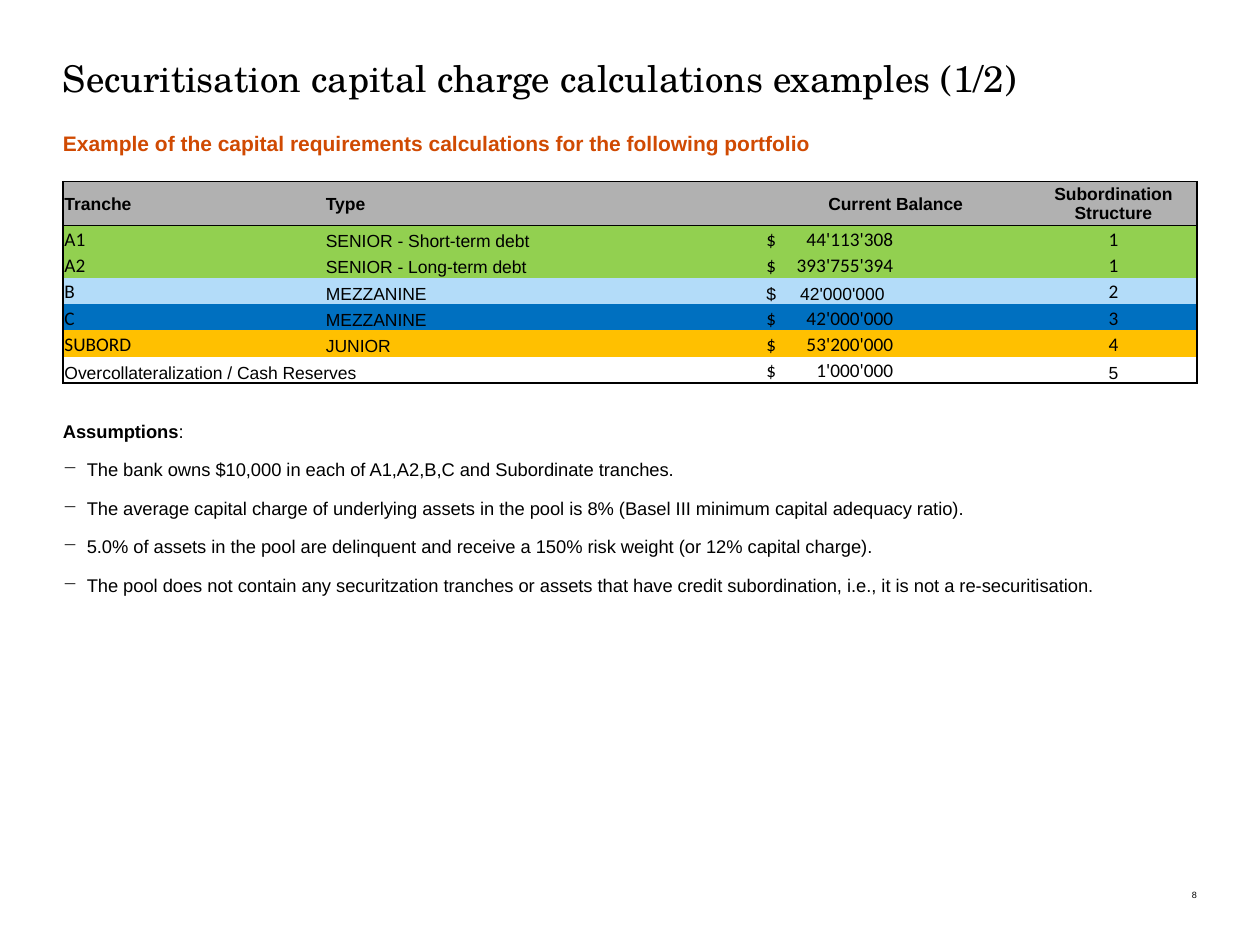
import dataclasses
from typing import Optional

import lxml.etree
import pptx
import pptx.dml.color
import pptx.enum.text
import pptx.oxml.ns
import pptx.util

Cm, Pt = pptx.util.Cm, pptx.util.Pt
ALIGN, ANCHOR = pptx.enum.text.PP_ALIGN, pptx.enum.text.MSO_ANCHOR


@dataclasses.dataclass(frozen=True)
class TextStyle:
    font: str
    size: float
    color: str = "000000"
    bold: bool = False


@dataclasses.dataclass(frozen=True)
class Theme:
    title: TextStyle = TextStyle("TeX Gyre Schola", 21)
    subtitle: TextStyle = TextStyle("Arial", 12, "D04A02", True)
    body: TextStyle = TextStyle("Arial", 10.5)
    body_bold: TextStyle = TextStyle("Arial", 10.5, bold=True)
    header: TextStyle = TextStyle("Arial", 10, bold=True)
    label: TextStyle = TextStyle("Arial", 10)
    figure: TextStyle = TextStyle("Calibri", 11)
    page_number: TextStyle = TextStyle("Arial", 5.2)
    border: str = "000000"
    header_fill: str = "B1B1B1"
    senior: str = "92D050"
    mezzanine_light: str = "B3DCF9"
    mezzanine_dark: str = "0070C0"
    junior: str = "FFC000"


THEME = Theme()


@dataclasses.dataclass(frozen=True)
class Tranche:
    name: str
    kind: str
    balance: str
    rank: str
    fill: Optional[str] = None
    name_style: TextStyle = THEME.figure
    balance_style: TextStyle = THEME.figure
    rank_style: TextStyle = THEME.figure


HEADINGS = ("Tranche", "Type", "Current Balance", "Subordination Structure")
TRANCHES = (
    Tranche("A1", "SENIOR - Short-term debt", "44'113'308", "1", THEME.senior),
    Tranche("A2", "SENIOR - Long-term debt", "393'755'394", "1", THEME.senior),
    Tranche("B", "MEZZANINE", "42'000'000", "2", THEME.mezzanine_light,
            balance_style=THEME.label),
    Tranche("C", "MEZZANINE", "42'000'000", "3", THEME.mezzanine_dark),
    Tranche("SUBORD", "JUNIOR", "53'200'000", "4", THEME.junior),
    Tranche("Overcollateralization / Cash Reserves", "", "1'000'000", "5",
            name_style=THEME.label, rank_style=THEME.label),
)
ASSUMPTIONS = (
    "The bank owns $10,000 in each of A1,A2,B,C and Subordinate tranches.",
    "The average capital charge of underlying assets in the pool is 8% "
    "(Basel III minimum capital adequacy ratio).",
    "5.0% of assets in the pool are delinquent and receive a 150% risk weight "
    "(or 12% capital charge).",
    "The pool does not contain any securitzation tranches or assets that have "
    "credit subordination, i.e., it is not a re-securitisation.",
)
COLUMN_WIDTHS = (5.27, 8.81, 5.41, 3.37)
HEADER_HEIGHT, ROW_HEIGHT = 0.82, 0.53
LEFT, WIDTH = 1.27, 22.86


def add_element(parent, tag: str, **attributes: str):
    return lxml.etree.SubElement(parent, pptx.oxml.ns.qn(tag), attributes)


def style_run(run, style: TextStyle) -> None:
    run.font.name = style.font
    run.font.size = Pt(style.size)
    run.font.bold = style.bold
    run.font.color.rgb = pptx.dml.color.RGBColor.from_string(style.color)


def write(paragraph, text: str, style: TextStyle) -> None:
    paragraph.text = text
    for run in paragraph.runs:
        style_run(run, style)


def add_text_frame(slide, left: float, top: float, width: float, height: float):
    frame = slide.shapes.add_textbox(Cm(left), Cm(top), Cm(width), Cm(height)).text_frame
    frame.word_wrap = True
    frame.margin_left = frame.margin_right = frame.margin_top = frame.margin_bottom = 0
    return frame


def add_bullet(paragraph) -> None:
    """Hang the paragraph behind a minus sign."""
    properties = paragraph._p.get_or_add_pPr()
    properties.set("marL", str(Cm(0.48)))
    properties.set("indent", str(-Cm(0.48)))
    add_element(properties, "a:buChar", char="−")


def add_right_tab(paragraph, position: float) -> None:
    tabs = add_element(paragraph._p.get_or_add_pPr(), "a:tabLst")
    add_element(tabs, "a:tab", pos=str(Cm(position)), algn="r")


def set_borders(cell, widths: dict[str, float]) -> None:
    """Draw the sides named L, R, T, B at their point widths and clear the others."""
    properties = cell._tc.get_or_add_tcPr()
    for side in "LRTB":
        width = widths.get(side, 0)
        line = add_element(properties, f"a:ln{side}", w=str(Pt(width)))
        if width:
            fill = add_element(line, "a:solidFill")
            add_element(fill, "a:srgbClr", val=THEME.border)
        else:
            add_element(line, "a:noFill")


def fill_cell(cell, text: str, style: TextStyle, fill: Optional[str],
              borders: dict[str, float], centred: bool, anchor) -> None:
    set_borders(cell, borders)
    if fill:
        cell.fill.solid()
        cell.fill.fore_color.rgb = pptx.dml.color.RGBColor.from_string(fill)
    else:
        cell.fill.background()
    cell.margin_left = cell.margin_right = cell.margin_top = Cm(0.03)
    cell.margin_bottom = 0
    cell.vertical_anchor = anchor
    paragraph = cell.text_frame.paragraphs[0]
    write(paragraph, text, style)
    paragraph.alignment = ALIGN.CENTER if centred else ALIGN.LEFT


def cell_borders(row: int, column: int) -> dict[str, float]:
    """Outer frame of 1 pt and a thin rule below the header."""
    borders = {}
    if column == 0:
        borders["L"] = 1
    if column == len(HEADINGS) - 1:
        borders["R"] = 1
    if row <= 1:
        borders["T"] = 1 if row == 0 else 0.5
    if row == 0 or row == len(TRANCHES):
        borders["B"] = 0.5 if row == 0 else 1
    return borders


def add_tranche_table(slide) -> None:
    height = HEADER_HEIGHT + ROW_HEIGHT * len(TRANCHES)
    table = slide.shapes.add_table(len(TRANCHES) + 1, len(HEADINGS), Cm(LEFT), Cm(3.66),
                                   Cm(WIDTH), Cm(height)).table
    table.first_row = table.horz_banding = False
    for column, width in zip(table.columns, COLUMN_WIDTHS):
        column.width = Cm(width)
    for index, row in enumerate(table.rows):
        row.height = Cm(ROW_HEIGHT if index else HEADER_HEIGHT)

    for column, heading in enumerate(HEADINGS):
        fill_cell(table.cell(0, column), heading, THEME.header, THEME.header_fill,
                  cell_borders(0, column), column >= 2, ANCHOR.MIDDLE)
    for row, tranche in enumerate(TRANCHES, start=1):
        entries = ((tranche.name, tranche.name_style), (tranche.kind, THEME.label),
                   (f"$\t{tranche.balance}", tranche.balance_style),
                   (tranche.rank, tranche.rank_style))
        for column, (text, style) in enumerate(entries):
            fill_cell(table.cell(row, column), text, style, tranche.fill,
                      cell_borders(row, column), column == 3, ANCHOR.BOTTOM)
        balance = table.cell(row, 2)
        balance.margin_left = Cm(0.1)
        add_right_tab(balance.text_frame.paragraphs[0],
                      2.56 if tranche.balance_style == THEME.figure else 2.38)
        if not tranche.kind:
            table.cell(row, 0).merge(table.cell(row, 1))


def add_body(slide) -> None:
    frame = add_text_frame(slide, LEFT, 2.64, WIDTH, 13.94)
    subtitle = frame.paragraphs[0]
    write(subtitle, "Example of the capital requirements calculations for the following portfolio",
          THEME.subtitle)
    subtitle.space_after = Pt(9)

    heading = frame.add_paragraph()
    write(heading, "Assumptions", THEME.body_bold)
    colon = heading.add_run()
    colon.text = ":"
    style_run(colon, THEME.body)
    heading.space_before = Pt(142)
    heading.space_after = Pt(9)

    for assumption in ASSUMPTIONS:
        paragraph = frame.add_paragraph()
        write(paragraph, assumption, THEME.body)
        paragraph.space_after = Pt(9.5)
        add_bullet(paragraph)


def main() -> None:
    presentation = pptx.Presentation()
    presentation.slide_width, presentation.slide_height = Cm(25.4), Cm(19.05)
    slide = presentation.slides.add_slide(presentation.slide_layouts[6])

    add_body(slide)
    page_number = add_text_frame(slide, 23.11, 17.78, 1.02, 0.38)
    page_number.vertical_anchor = ANCHOR.BOTTOM
    write(page_number.paragraphs[0], "8", THEME.page_number)
    page_number.paragraphs[0].alignment = ALIGN.RIGHT

    title = add_text_frame(slide, LEFT, 1.27, WIDTH, 1.42).paragraphs[0]
    write(title, "Securitisation capital charge calculations examples (1/2)", THEME.title)
    title.line_spacing = 0.85
    add_tranche_table(slide)
    presentation.save("out.pptx")


if __name__ == "__main__":
    main()
